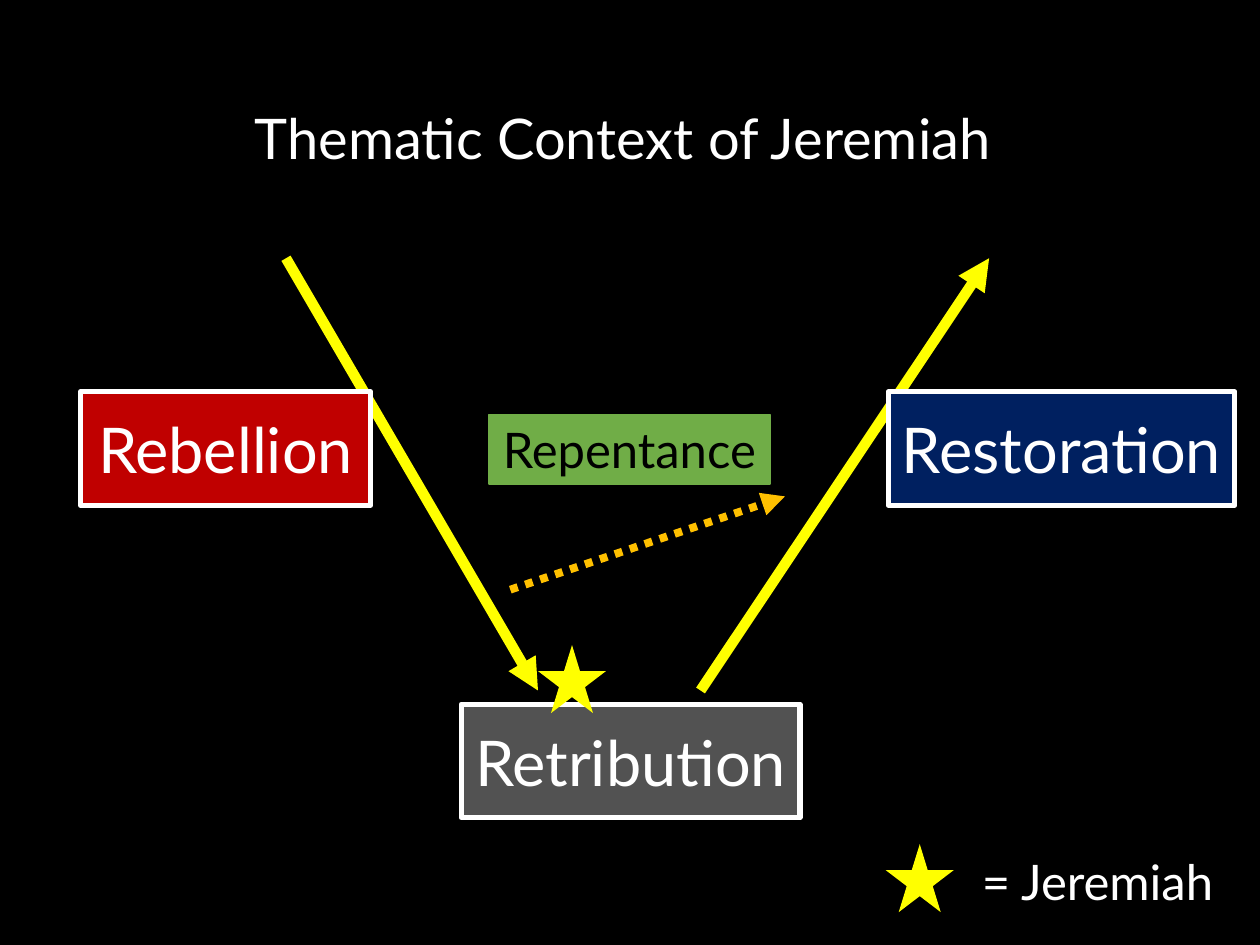
import pptx
import pptx.util
import pptx.dml.color
import pptx.enum.dml
import pptx.enum.shapes
import pptx.enum.text
import pptx.oxml.ns
import lxml.etree
from pptx.util import Inches

COLORS = {
    "black": "000000", "white": "FFFFFF", "yellow": "FFFF00", "amber": "FFC000",
    "red": "C00000", "gray": "525252", "navy": "002060", "green": "70AD47",
}
SHAPES = pptx.enum.shapes.MSO_SHAPE


def rgb(name):
    return pptx.dml.color.RGBColor.from_string(COLORS[name])


def write(shape, text, size, color):
    frame = shape.text_frame
    frame.text = text
    frame.vertical_anchor = pptx.enum.text.MSO_ANCHOR.MIDDLE
    para = frame.paragraphs[0]
    para.alignment = pptx.enum.text.PP_ALIGN.CENTER
    span = para.runs[0]
    span.font.name = "Lato"
    span.font.size = pptx.util.Pt(size)
    span.font.color.rgb = rgb(color)


deck = pptx.Presentation()
deck.slide_width, deck.slide_height = Inches(10), Inches(7.5)
page = deck.slides.add_slide(deck.slide_layouts[5])
page.background.fill.solid()
page.background.fill.fore_color.rgb = rgb("black")

# Title
title = page.shapes.title
title.left, title.top = Inches(0.69), Inches(0.4)
title.width, title.height = Inches(8.62), Inches(1.45)
write(title, "Thematic Context of Jeremiah ", 32, "white")
title.text_frame.paragraphs[0].line_spacing = 0.9

# Arrows: down to retribution, up to restoration, and the dotted repentance path
arrows = [
    ((2.27, 2.05), (4.27, 5.48), "yellow", 6, None),
    ((5.56, 5.48), (7.85, 2.05), "yellow", 6, None),
    ((4.05, 4.68), (6.23, 3.94), "amber", 4.5, pptx.enum.dml.MSO_LINE.ROUND_DOT),
]
for start, end, color, weight, dash in arrows:
    arrow = page.shapes.add_connector(
        pptx.enum.shapes.MSO_CONNECTOR.STRAIGHT,
        *[Inches(value) for value in start + end])
    arrow.line.color.rgb = rgb(color)
    arrow.line.width = pptx.util.Pt(weight)
    if dash is not None:
        arrow.line.dash_style = dash
    properties = arrow._element.spPr
    outline = properties.find(pptx.oxml.ns.qn("a:ln"))
    lxml.etree.SubElement(outline, pptx.oxml.ns.qn("a:tailEnd"), type="triangle")
    lxml.etree.SubElement(properties, pptx.oxml.ns.qn("a:effectLst"))

# Theme boxes: text, left, top, width, height, fill, line, line width, size, text color
boxes = [
    ("Rebellion", 0.64, 3.11, 2.3, 0.9, "red", "white", 3, 36, "white"),
    ("Retribution", 3.66, 5.59, 2.69, 0.9, "gray", "white", 3, 36, "white"),
    ("Restoration", 7.05, 3.11, 2.75, 0.9, "navy", "white", 3, 36, "white"),
    ("Repentance", 3.88, 3.29, 2.23, 0.55, "green", "green", 1, 28, "black"),
]
for text, left, top, width, height, fill, line, weight, size, color in boxes:
    box = page.shapes.add_shape(SHAPES.RECTANGLE, Inches(left), Inches(top),
                                Inches(width), Inches(height))
    box.shadow.inherit = False
    box.fill.solid()
    box.fill.fore_color.rgb = rgb(fill)
    box.line.color.rgb = rgb(line)
    box.line.width = pptx.util.Pt(weight)
    write(box, text, size, color)
    box.text_frame.word_wrap = False

# Stars: Jeremiah's place in the sequence, and the legend
for left, top in [(4.27, 5.12), (7.03, 6.7)]:
    star = page.shapes.add_shape(SHAPES.STAR_5_POINT, Inches(left), Inches(top),
                                 Inches(0.54), Inches(0.54))
    star.shadow.inherit = False
    star.fill.solid()
    star.fill.fore_color.rgb = rgb("yellow")
    star.line.fill.background()

legend = page.shapes.add_textbox(Inches(7.59), Inches(6.71), Inches(2.24), Inches(0.57))
write(legend, "= Jeremiah", 28, "white")
legend.text_frame.word_wrap = True
legend.text_frame.vertical_anchor = pptx.enum.text.MSO_ANCHOR.TOP

deck.save("out.pptx")
